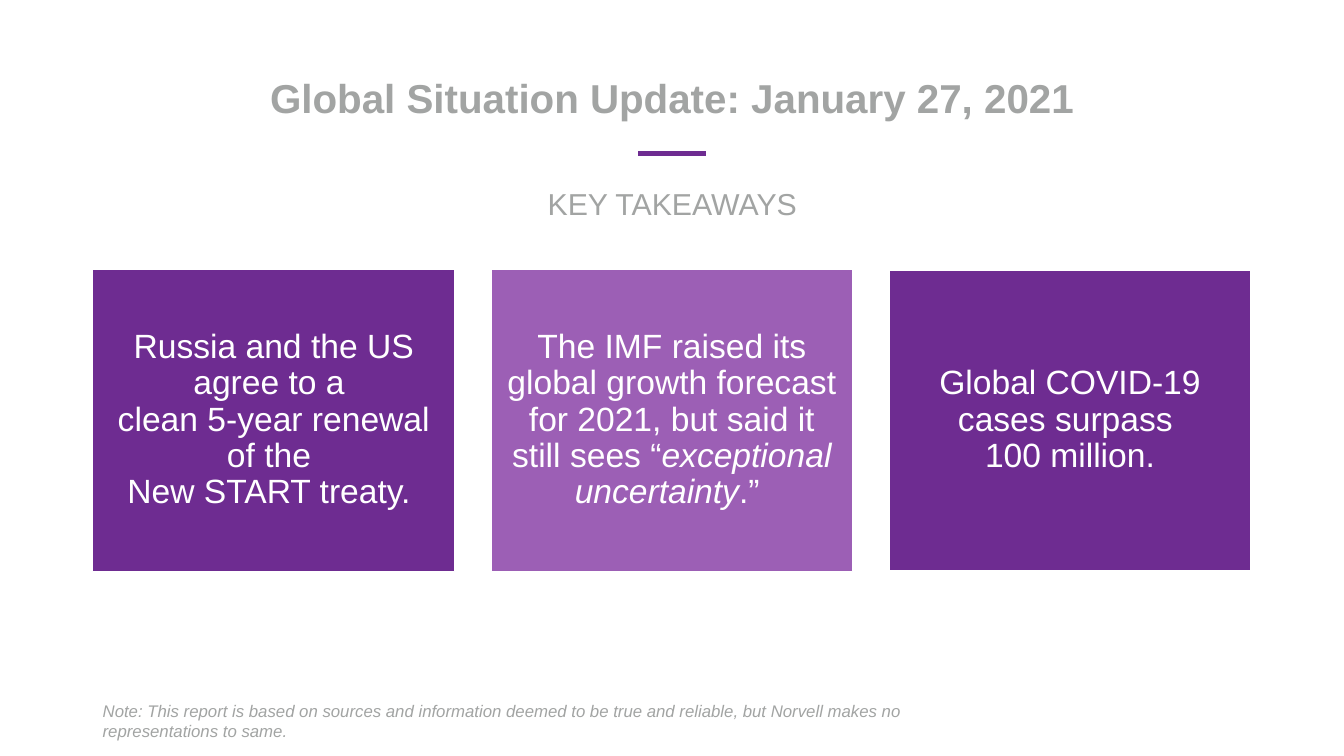
from lxml import etree
from pptx import Presentation
from pptx.dml.color import RGBColor
from pptx.enum import shapes, text
from pptx.oxml import ns
from pptx.util import Pt

GREY = RGBColor(0xA2, 0xA4, 0xA3)
PURPLE = RGBColor(0x6E, 0x2C, 0x91)
LILAC = RGBColor(0x9C, 0x5F, 0xB5)
WHITE = RGBColor(0xFF, 0xFF, 0xFF)

LEFT = 66.24
STEP = 284.4
WIDTH = 258.5

# Each card: top, height, fill, and runs of (text, italic)
CARDS = [
    (192.24, 216, PURPLE,
     [("Russia and the US agree to a \nclean 5-year renewal of the \n"
       "New START treaty. ", False)]),
    (192.24, 216, LILAC,
     [("The IMF raised its global growth forecast for 2021, "
       "but said it still sees “", False),
      ("exceptional uncertainty", True), (".” ", False)]),
    (192.96, 214.56, PURPLE,
     [("Global COVID-19 cases surpass \n100 million.", False)]),
]
NOTE = ("Note: This report is based on sources and information deemed to be "
        "true and reliable, but Norvell makes no representations to same.")


def apply(item, form):
    for name, value in form.items():
        setattr(item, name, value)


def add_run(par, words, size, color, **form):
    for i, line in enumerate(words.split("\n")):
        if i:
            par.add_line_break()
        run = par.add_run()
        run.text = line
        apply(run.font, {"name": "Arial", "size": Pt(size), **form})
        run.font.color.rgb = color


def set_frame(frame, inset=None):
    apply(frame, {"word_wrap": True, "auto_size": text.MSO_AUTO_SIZE.NONE,
                  "vertical_anchor": text.MSO_ANCHOR.MIDDLE})
    if inset is not None:
        for side in ("left", "right", "top", "bottom"):
            setattr(frame, "margin_" + side, Pt(inset))


def set_par(par, gap=0):
    apply(par, {"alignment": text.PP_ALIGN.CENTER, "line_spacing": 0.9,
                "space_before": Pt(gap)})


def add_title(slide):
    title = slide.shapes.title
    apply(title, {"left": Pt(LEFT), "top": Pt(55.44),
                  "width": Pt(828), "height": Pt(104.4)})
    frame = title.text_frame
    set_frame(frame)
    head = frame.paragraphs[0]
    set_par(head)
    add_run(head, "Global Situation Update: January 27, 2021", 28.8, GREY,
            bold=True)
    sub = frame.add_paragraph()
    set_par(sub, 48)
    add_run(sub, "KEY TAKEAWAYS", 21.6, GREY, bold=False)


def add_card(slide, left, top, height, fill, runs):
    card = slide.shapes.add_shape(shapes.MSO_SHAPE.RECTANGLE, Pt(left),
                                  Pt(top), Pt(WIDTH), Pt(height))
    card.shadow.inherit = False
    card.fill.solid()
    card.fill.fore_color.rgb = fill
    card.line.color.rgb = WHITE
    card.line.width = Pt(1)
    set_frame(card.text_frame, 7.2)
    par = card.text_frame.paragraphs[0]
    set_par(par)
    for words, slant in runs:
        add_run(par, words, 24, WHITE, italic=slant)


def add_rule(slide):
    rule = slide.shapes.add_connector(shapes.MSO_CONNECTOR.STRAIGHT, Pt(456),
                                      Pt(109.6), Pt(504), Pt(109.6))
    rule.line.color.rgb = PURPLE
    rule.line.width = Pt(3)
    props = rule._element.spPr
    etree.SubElement(props, ns.qn("a:effectLst"))


def add_note(slide):
    box = slide.shapes.add_textbox(Pt(LEFT), Pt(500.4), Pt(591), Pt(28.8))
    set_frame(box.text_frame)
    add_run(box.text_frame.paragraphs[0], NOTE, 12, GREY, italic=True)


def main():
    deck = Presentation()
    apply(deck, {"slide_width": Pt(960), "slide_height": Pt(540)})
    slide = deck.slides.add_slide(deck.slide_layouts[5])

    # Heading
    add_title(slide)

    # Takeaway cards
    for i, card in enumerate(CARDS):
        add_card(slide, LEFT + i * STEP, *card)

    # Accent rule and footnote
    add_rule(slide)
    add_note(slide)
    deck.save("out.pptx")


if __name__ == "__main__":
    main()
